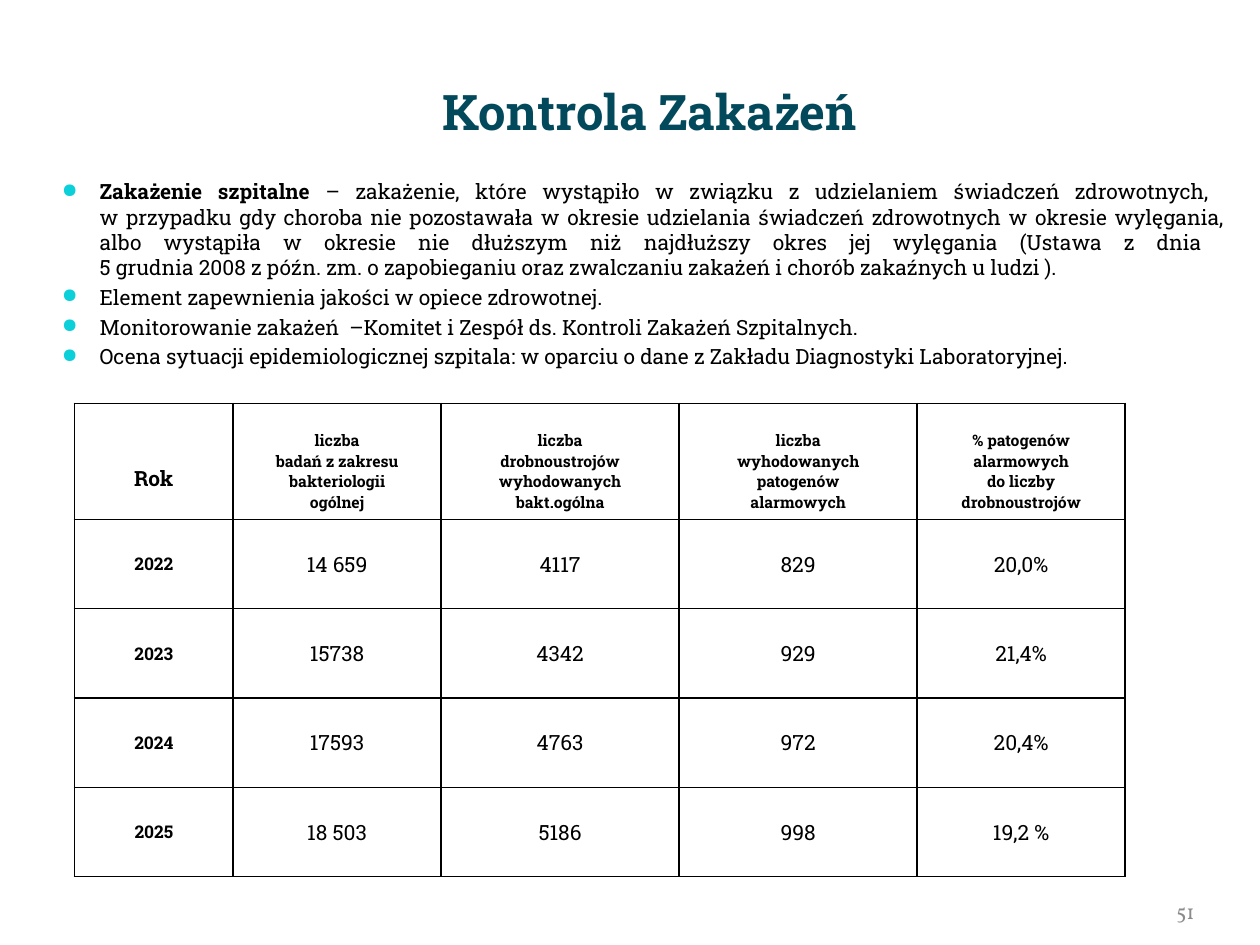
from lxml import etree
from pptx import Presentation
from pptx.dml.color import RGBColor
from pptx.enum.text import MSO_ANCHOR, MSO_AUTO_SIZE, PP_ALIGN
from pptx.oxml.ns import qn
from pptx.util import Cm, Pt

LEFT, MID, RIGHT, JUST = PP_ALIGN.LEFT, PP_ALIGN.CENTER, PP_ALIGN.RIGHT, PP_ALIGN.JUSTIFY
TOP, CENTRE, BOTTOM = MSO_ANCHOR.TOP, MSO_ANCHOR.MIDDLE, MSO_ANCHOR.BOTTOM
NONE = MSO_AUTO_SIZE.NONE

SLAB, SERIF = "Roboto Slab", "Vollkorn"
BLACK, WHITE, TEAL, AQUA, GREY = "000000", "FFFFFF", "03495C", "0BD0D9", "8B8B8B"

TITLE = "Kontrola Zakażeń"
TERM = "Zakażenie szpitalne "
POINTS = [
    ["– zakażenie, które wystąpiło w związku z udzielaniem świadczeń zdrowotnych, ",
     "w przypadku gdy choroba nie pozostawała w okresie udzielania świadczeń "
     "zdrowotnych w okresie wylęgania, albo wystąpiła w okresie nie dłuższym niż "
     "najdłuższy okres jej wylęgania (Ustawa z dnia ",
     "5 grudnia 2008 z późn. zm. o zapobieganiu oraz zwalczaniu zakażeń "
     "i chorób zakaźnych u ludzi )."],
    ["Element zapewnienia jakości w opiece zdrowotnej."],
    ["Monitorowanie zakażeń  –Komitet i Zespół ds. Kontroli Zakażeń Szpitalnych."],
    ["Ocena sytuacji epidemiologicznej szpitala: w oparciu o dane "
     "z Zakładu Diagnostyki Laboratoryjnej."],
]
HEADS = [
    "Rok",
    "liczba\nbadań z zakresu\nbakteriologii\nogólnej",
    "liczba\ndrobnoustrojów\nwyhodowanych\nbakt.ogólna",
    "liczba\nwyhodowanych\npatogenów\nalarmowych",
    "% patogenów\nalarmowych\vdo liczby\ndrobnoustrojów",
]
ROWS = [
    ["2022", "14 659", "4117", "829", "20,0%"],
    ["2023", "15738", "4342", "929", "21,4%"],
    ["2024", "17593", "4763", "972", "20,4%"],
    ["2025", "18 503", "5186", "998", "19,2 %"],
]
WIDTHS = [3.2, 4.19, 4.8, 4.8, 4.19]
HEAD_H, ROW_H = 2.34, 1.8
PAGE = "51"


def tint(code):
    return RGBColor.from_string(code)


def put(obj, **vals):
    for key, val in vals.items():
        setattr(obj, key, val)


def style(font, size, code=BLACK, bold=False, name=SLAB):
    put(font, size=Pt(size), bold=bold, name=name)
    font.color.rgb = tint(code)


def pads(left, top, right, bottom):
    names = ("margin_left", "margin_top", "margin_right", "margin_bottom")
    return dict(zip(names, map(Cm, (left, top, right, bottom))))


def place(shape, left, top, width, height):
    put(shape, left=Cm(left), top=Cm(top), width=Cm(width), height=Cm(height))


def bullet(para):
    props = para._p.get_or_add_pPr()
    props.set("marL", str(Cm(0.76)))
    props.set("indent", str(-Cm(0.76)))
    hue = etree.SubElement(props, qn("a:buClr"))
    etree.SubElement(hue, qn("a:srgbClr"), val=AQUA)
    etree.SubElement(props, qn("a:buSzPct"), val="95000")
    etree.SubElement(props, qn("a:buChar"), char="●")


def border(cell):
    props = cell._tc.get_or_add_tcPr()
    for pos, side in enumerate(("lnL", "lnR", "lnT", "lnB")):
        line = etree.Element(qn("a:" + side), w=str(Pt(0.96)))
        fill = etree.SubElement(line, qn("a:solidFill"))
        etree.SubElement(fill, qn("a:srgbClr"), val=BLACK)
        props.insert(pos, line)


def add_title(slide):
    shape = slide.shapes.title
    place(shape, 1, 1.52, 23.95, 1.9)
    frame = shape.text_frame
    frame.text = TITLE
    put(frame, word_wrap=True, auto_size=NONE, vertical_anchor=TOP,
        **pads(0.48, 0.13, 0.25, 0.13))
    para = frame.paragraphs[0]
    para.alignment = MID
    style(para.runs[0].font, 28, TEAL, True)


def add_points(slide):
    box = slide.shapes.add_textbox(Cm(1), Cm(3.47), Cm(23.95), Cm(4.2))
    frame = box.text_frame
    put(frame, word_wrap=True, **pads(0.25, 0.13, 0.25, 0.13))
    for num, lines in enumerate(POINTS):
        para = frame.add_paragraph() if num else frame.paragraphs[0]
        bullet(para)
        put(para, alignment=JUST, line_spacing=Pt(14.5), space_before=Pt(2.4 if num else 0))
        if num == 0:
            run = para.add_run()
            run.text = TERM
            style(run.font, 12, bold=True)
        for pos, line in enumerate(lines):
            if pos:
                para.add_line_break()
            run = para.add_run()
            run.text = line
            style(run.font, 12)


def add_grid(slide):
    data = [HEADS] + ROWS
    frame = slide.shapes.add_table(
        len(data), len(WIDTHS), Cm(1.5), Cm(8.13),
        Cm(sum(WIDTHS)), Cm(HEAD_H + ROW_H * len(ROWS)))
    grid = frame.table
    put(grid, first_row=False, horz_banding=False)
    for col, width in zip(grid.columns, WIDTHS):
        col.width = Cm(width)
    for r, texts in enumerate(data):
        grid.rows[r].height = Cm(ROW_H if r else HEAD_H)
        for c, text in enumerate(texts):
            cell = grid.cell(r, c)
            cell.text = text
            corner = r == c == 0
            put(cell, vertical_anchor=CENTRE if r else BOTTOM,
                **pads(0.03, 0.13, 0.03, 0.55 if corner else 0.13))
            cell.fill.solid()
            cell.fill.fore_color.rgb = tint(WHITE)
            border(cell)
            size = 12 if corner or (r and c) else 10 if r else 9
            for para in cell.text_frame.paragraphs:
                para.alignment = MID
                for run in para.runs:
                    style(run.font, size, bold=r == 0 or c == 0)


def add_page(slide):
    box = slide.shapes.add_textbox(Cm(22.02), Cm(17.65), Cm(2.06), Cm(0.97))
    frame = box.text_frame
    frame.text = PAGE
    put(frame, word_wrap=True, vertical_anchor=BOTTOM, **pads(0, 0, 0, 0))
    para = frame.paragraphs[0]
    para.alignment = RIGHT
    style(para.runs[0].font, 12, GREY, name=SERIF)


def main():
    deck = Presentation()
    put(deck, slide_width=Cm(25.4), slide_height=Cm(19.05))
    slide = deck.slides.add_slide(deck.slide_layouts[5])
    for add in (add_title, add_points, add_grid, add_page):
        add(slide)
    deck.save("out.pptx")


if __name__ == "__main__":
    main()
